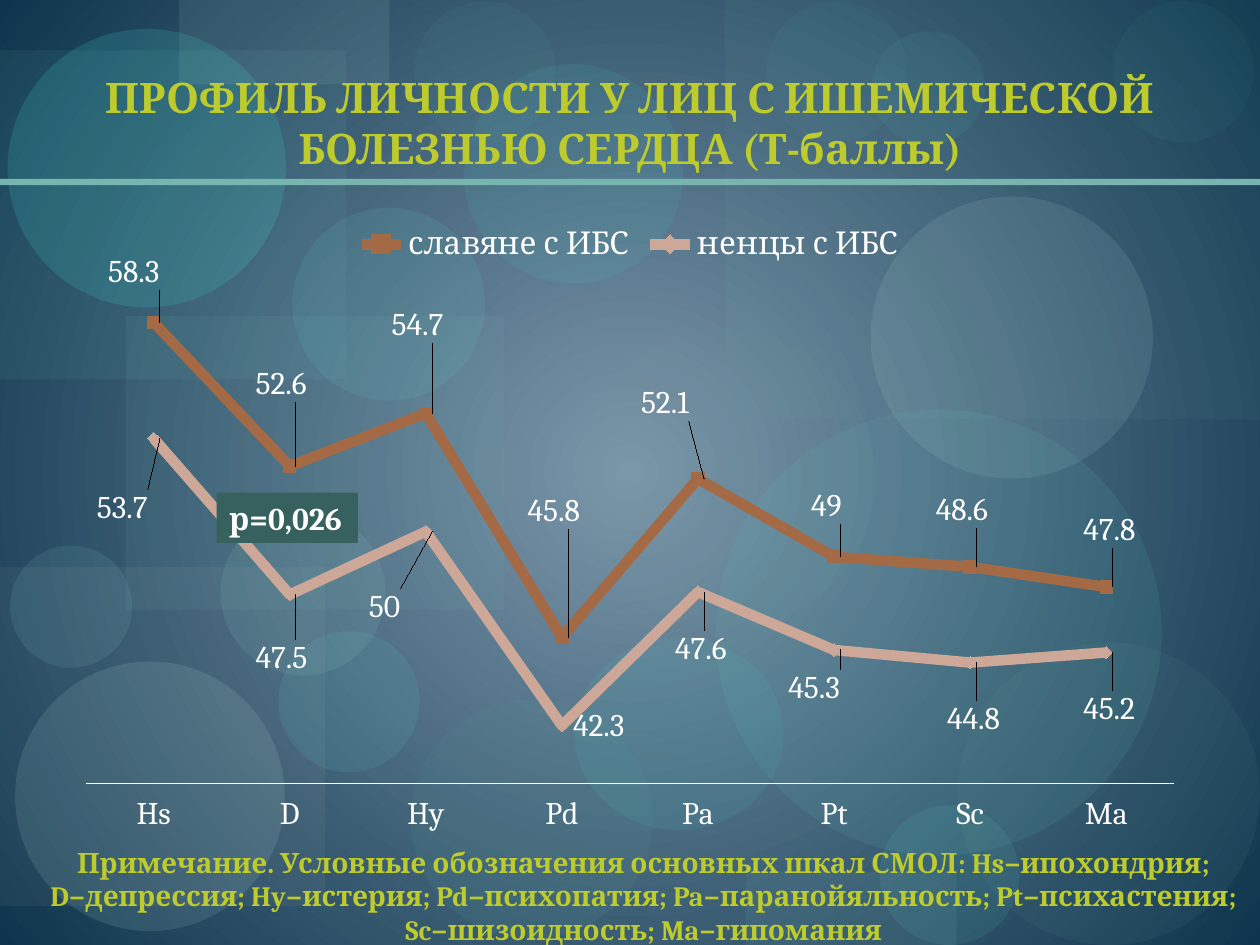
"""Build the slide with the personality profile line chart."""
from lxml.etree import SubElement
from pptx import Presentation
from pptx.chart.data import CategoryChartData
from pptx.dml.color import RGBColor
from pptx.enum.chart import (XL_CHART_TYPE as ChartType, XL_LABEL_POSITION as LabelPosition,
                             XL_LEGEND_POSITION as LegendPosition, XL_MARKER_STYLE as Marker,
                             XL_TICK_LABEL_POSITION as TickLabel, XL_TICK_MARK as Tick)
from pptx.enum.shapes import MSO_SHAPE as Preset
from pptx.enum.text import MSO_ANCHOR as Anchor, PP_ALIGN as Align
from pptx.oxml import parse_xml
from pptx.oxml.ns import nsdecls, qn
from pptx.util import Inches, Pt

FONT = "Cambria"
COLORS = {name: RGBColor.from_string(value) for name, value in {
    "center": "7B96AA", "edge": "0E354D", "rule": "79B5B0", "heading": "BECB2D",
    "white": "FFFFFF", "badge": "36615E", "slavs": "A46A46", "nenets": "CDA797"}.items()}
DECOR = [
    ("RECTANGLE", 1, 2.51, 3, 2.33, "79B5B0", 9),
    ("OVAL", 3.26, 5.55, 1.92, 1.9, "549791", 13),
    ("RECTANGLE", 5.75, 0, 4.25, 3.33, "79B5B0", 6),
    ("RECTANGLE", 0, 4.5, 2.58, 2.69, "B2B7BA", 8),
    ("OVAL", 4.57, 2.61, 2.38, 2.38, "70A39E", 8),
    ("OVAL", 6.98, 6.39, 1.11, 1.11, "65E8DC", 9),
    ("OVAL", 6.91, 1.56, 2.24, 2.24, "C1E8E4", 11),
    ("OVAL", 0.12, 5.25, 2.14, 2.14, "C1E8E4", 12),
    ("OVAL", 2.21, 5.01, 1.12, 1.12, "65E8DC", 9),
    ("OVAL", 4.56, 5.06, 1.66, 1.53, "44EADC", 8),
    ("RECTANGLE", 0, 0.4, 2.75, 2.61, "77D6CE", 7),
    ("RECTANGLE", 1.42, 0, 1.67, 0.67, "BED7D4", 10),
    ("OVAL", 0.06, 0.23, 2.21, 2.21, "44EADC", 15),
    ("OVAL", 0.08, 4.33, 0.97, 0.97, "97DCD6", 10),
    ("OVAL", 2.32, 1.65, 1.53, 1.53, "65E8DC", 9),
    ("OVAL", 3.68, 0.51, 1.74, 1.74, "44EADC", 8),
    ("OVAL", 5.68, 3.25, 3.54, 3.54, "61CDC4", 10),
    ("OVAL", 6.08, 0.01, 1.12, 1.12, "65E8DC", 4),
    ("OVAL", 7.6, 5.1, 2.4, 2.4, "70A39E", 8),
    ("OVAL", 1.75, 4.05, 1.31, 1.31, "97DCD6", 10),
    ("OVAL", 6.92, 0.25, 0.9, 0.9, "65E8DC", 6),
    ("OVAL", 8.83, 0.01, 1.12, 1.12, "65E8DC", 4),
    ("RECTANGLE", 5.92, 6.92, 1.67, 0.58, "79B5B0", 10),
    ("OVAL", 3.29, 0.01, 1.12, 1.12, "65E8DC", 4),
    ("RECTANGLE", 0, 1.42, 10, 0.05, "79B5B0", 100),
]
SERIES = [
    ("славяне с ИБС", "slavs", Marker.SQUARE,
     [58.3, 52.6, 54.7, 45.8, 52.1, 49, 48.6, 47.8],
     [(-0.05, -0.08), (-0.04, -0.13), (-0.04, -0.14), (-0.04, -0.2),
      (-0.06, -0.12), (-0.03, -0.08), (-0.04, -0.09), (-0.03, -0.09)]),
    ("ненцы с ИБС", "nenets", Marker.DIAMOND,
     [53.7, 47.5, 50, 42.3, 47.6, 45.3, 44.8, 45.2],
     [(-0.06, 0.11), (-0.04, 0.1), (-0.06, 0.12), (0, 0),
      (-0.03, 0.09), (-0.05, 0.06), (-0.03, 0.09), (-0.03, 0.09)]),
]


def add_text(shape, text, size, color, align):
    paragraph = shape.text_frame.paragraphs[0]
    paragraph.alignment = align
    run = paragraph.add_run()
    run.text = text
    run.font.size, run.font.bold = Pt(size), True
    run.font.color.rgb = COLORS[color]
    run.font.name = FONT
    return run


def manual_layout(**values):
    layout = parse_xml(f"<c:layout {nsdecls('c')}><c:manualLayout/></c:layout>")
    for name, value in values.items():
        SubElement(layout[0], qn(f"c:{name}")).set("val", str(value))
    return layout


presentation = Presentation()
presentation.slide_width, presentation.slide_height = Inches(10), Inches(7.5)
slide = presentation.slides.add_slide(presentation.slide_layouts[5])

background = slide.background.fill
background.gradient()
for stop, position, name in zip(background.gradient_stops, (0, 1), ("center", "edge")):
    stop.position = position
    stop.color.rgb = COLORS[name]
gradient = next(slide.element.iter(qn("a:gradFill")))
gradient.replace(gradient.find(qn("a:lin")), parse_xml(
    f'<a:path {nsdecls("a")} path="circle">'
    '<a:fillToRect l="50000" t="50000" r="50000" b="50000"/></a:path>'))

for preset, left, top, width, height, color, opacity in DECOR:
    shape = slide.shapes.add_shape(Preset[preset], *map(Inches, (left, top, width, height)))
    shape.shadow.inherit = False
    shape.fill.solid()
    shape.fill.fore_color.rgb = RGBColor.from_string(color)
    shape.line.fill.background()
    tint = next(shape.element.spPr.iter(qn("a:srgbClr")))
    SubElement(tint, qn("a:alpha")).set("val", str(opacity * 1000))

title = slide.shapes.title
title.left, title.top, title.width, title.height = map(Inches, (0.5, 0.17, 9, 1.25))
title.text_frame.vertical_anchor = Anchor.BOTTOM
heading = add_text(title, "ПРОФИЛЬ ЛИЧНОСТИ У ЛИЦ С ИШЕМИЧЕСКОЙ БОЛЕЗНЬЮ СЕРДЦА (Т-баллы)",
                   24, "heading", Align.CENTER)
heading.font.fill.solid()
heading.font.color.rgb = COLORS["heading"]
next(title.element.iter(qn("a:latin"))).addprevious(parse_xml(
    f'<a:effectLst {nsdecls("a")}><a:outerShdw blurRad="50800" dist="50800" dir="5400000">'
    '<a:srgbClr val="000000"><a:alpha val="65000"/></a:srgbClr></a:outerShdw></a:effectLst>'))
slide.shapes.element.append(title.element)

data = CategoryChartData()
data.categories = ["Hs", "D", "Hy", "Pd", "Pa", "Pt", "Sc", "Ma"]
for name, color, marker, values, offsets in SERIES:
    data.add_series(name, values)
chart = slide.shapes.add_chart(ChartType.LINE_MARKERS, *map(Inches, (0.5, 1.67, 9, 5)), data).chart
chart.has_title = False
chart.font.name, chart.font.size = FONT, Pt(18)
chart.font.color.rgb = COLORS["white"]
chart.has_legend = True
chart.legend.position = LegendPosition.TOP
chart.legend.include_in_layout = False

category_axis, value_axis = chart.category_axis, chart.value_axis
category_axis.major_tick_mark = Tick.NONE
category_axis.tick_label_position = TickLabel.LOW
category_axis.format.line.color.rgb = COLORS["white"]
category_axis.format.line.width = Pt(0.75)
value_axis.minimum_scale, value_axis.maximum_scale = 40, 60
value_axis.has_major_gridlines = False
value_axis.visible = False

plot_area = next(chart.element.iter(qn("c:plotArea")))
for layout in plot_area.findall(qn("c:layout")):
    plot_area.remove(layout)
plot_area.insert(0, manual_layout(layoutTarget="inner", xMode="edge", yMode="edge",
                                  x=0.02, y=0.11, w=0.96, h=0.8))

plot = chart.plots[0]
plot.vary_by_categories = False
for series, (name, color, marker, values, offsets) in zip(plot.series, SERIES):
    series.smooth = False
    series.format.line.color.rgb = COLORS[color]
    series.format.line.width = Pt(6)
    series.marker.style, series.marker.size = marker, 7
    series.marker.format.fill.solid()
    series.marker.format.fill.fore_color.rgb = COLORS[color]
    series.marker.format.line.color.rgb = COLORS[color]
    series.data_labels.show_value = True
    series.data_labels.position = LabelPosition.RIGHT
    for index, (x, y) in enumerate(offsets):
        series.points[index].data_label.position = LabelPosition.RIGHT
    for label, (x, y) in zip(plot_area.findall(f".//{qn('c:ser')}")[series.index].iter(qn("c:dLbl")), offsets):
        label.find(qn("c:idx")).addnext(manual_layout(x=x, y=y))

note = slide.shapes.add_textbox(*map(Inches, (0.25, 6.66, 9.72, 0.91)))
note.text_frame.word_wrap = True
add_text(note, "Примечание. Условные обозначения основных шкал СМОЛ: Hs−ипохондрия; "
         "D−депрессия; Hy−истерия; Pd−психопатия; Pa−паранойяльность; Pt−психастения; "
         "Sc−шизоидность; Ma−гипомания", 16, "heading", Align.CENTER)

badge = slide.shapes.add_shape(Preset.RECTANGLE, *map(Inches, (1.72, 3.91, 1.12, 0.4)))
badge.shadow.inherit = False
badge.fill.solid()
badge.fill.fore_color.rgb = COLORS["badge"]
badge.line.fill.background()
badge.text_frame.word_wrap = False
add_text(badge, "р=0,026", 18, "white", Align.LEFT)

presentation.save("out.pptx")
